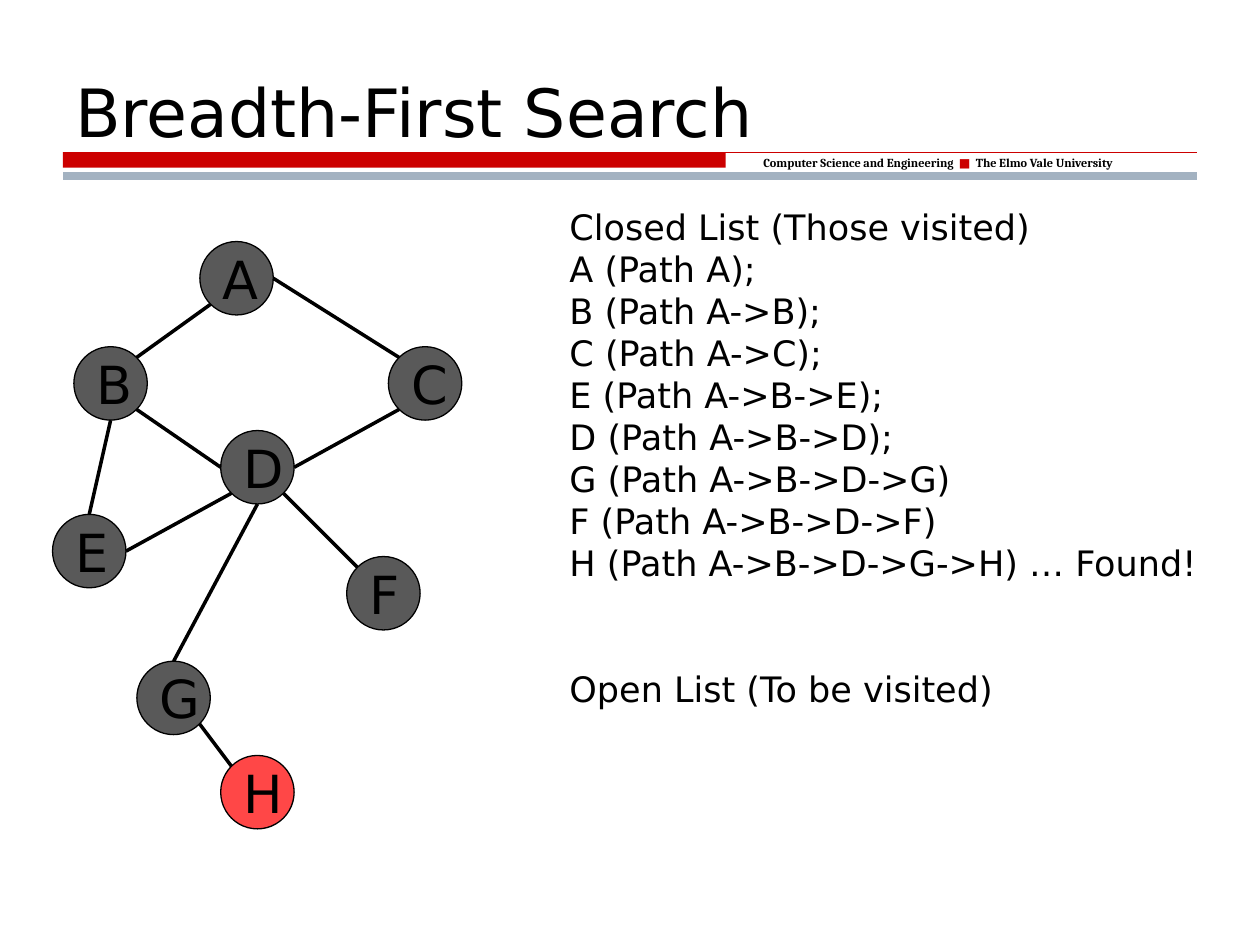
from math import cos, radians, sin

from lxml import etree
from pptx import Presentation
from pptx.dml.color import RGBColor
from pptx.enum import shapes, text
from pptx.oxml.ns import qn
from pptx.util import Cm, Pt

BLACK = RGBColor(0x00, 0x00, 0x00)
RED = RGBColor(0xCC, 0x00, 0x00)
STEEL = RGBColor(0xA3, 0xB2, 0xC1)
VISITED = RGBColor(0x59, 0x59, 0x59)
GOAL = RGBColor(0xFF, 0x47, 0x47)

SANS = "DejaVu Sans"
SERIF = "Cambria"

LEFT, RIGHT = 1.27, 24.13
BAR_TOP, BAR_END = 3.07, 14.63
DIAMETER = 1.48

CENTRES = {
    "A": (4.77, 5.61),
    "B": (2.23, 7.73),
    "C": (8.57, 7.73),
    "D": (5.19, 9.42),
    "E": (1.8, 11.11),
    "F": (7.73, 11.96),
    "G": (3.5, 14.07),
    "H": (5.19, 15.97),
}

ANGLES = {
    "right": 0, "lower right": 45, "bottom": 90, "lower left": 135,
    "left": 180, "upper left": 225, "top": 270, "upper right": 315,
}

EDGES = [
    ("A", "lower left", "B", "upper right"),
    ("A", "right", "C", "upper left"),
    ("D", "left", "B", "lower right"),
    ("D", "right", "C", "lower left"),
    ("D", "lower right", "F", "upper left"),
    ("E", "right", "D", "lower left"),
    ("G", "top", "D", "bottom"),
    ("E", "top", "B", "bottom"),
    ("H", "upper left", "G", "lower right"),
]

CLOSED_LIST = [
    "Closed List (Those visited)",
    "A (Path A);",
    "B (Path A->B);",
    "C (Path A->C);",
    "E (Path A->B->E);",
    "D (Path A->B->D);",
    "G (Path A->B->D->G)",
    "F (Path A->B->D->F)",
    "H (Path A->B->D->G->H) … Found!",
]
OPEN_LIST = "Open List (To be visited)"


def add_span(para, words, size, font=SANS, color=BLACK, bold=False):
    span = para.add_run()
    span.text = words
    span.font.size = Pt(size)
    span.font.name = font
    span.font.color.rgb = color
    span.font.bold = bold


def add_box(page, left, top, width, height, anchor=text.MSO_ANCHOR.TOP):
    box = page.shapes.add_textbox(Cm(left), Cm(top), Cm(width), Cm(height))
    box.text_frame.word_wrap = True
    box.text_frame.vertical_anchor = anchor
    return box.text_frame


def add_line(page, start, end, color, weight):
    line = page.shapes.add_connector(
        shapes.MSO_CONNECTOR.STRAIGHT, *(Cm(value) for value in (*start, *end)))
    line.line.color.rgb = color
    line.line.width = Pt(weight)
    etree.SubElement(line._element.spPr, qn("a:effectLst"))


def add_banner(page):
    bar = page.shapes.add_shape(
        shapes.MSO_SHAPE.RECTANGLE,
        Cm(LEFT), Cm(BAR_TOP), Cm(BAR_END - LEFT), Cm(0.31))
    bar.shadow.inherit = False
    bar.fill.solid()
    bar.fill.fore_color.rgb = RED
    bar.line.fill.background()
    add_line(page, (LEFT, BAR_TOP), (RIGHT, BAR_TOP), RED, 0.75)

    para = add_box(page, 15.14, 3.0, 8.66, 0.56).paragraphs[0]
    add_span(para, "Computer Science and Engineering  ", 7, SERIF, bold=True)
    add_span(para, "■", 7, color=RED)
    add_span(para, "  The Elmo Vale University", 7, SERIF, bold=True)
    add_line(page, (LEFT, 3.55), (RIGHT, 3.55), STEEL, 4.5)


def add_title(page, words):
    frame = add_box(page, LEFT, 0, RIGHT - LEFT, 3.17, text.MSO_ANCHOR.BOTTOM)
    add_span(frame.paragraphs[0], words, 38)


def add_node(page, letter, color):
    x, y = CENTRES[letter]
    node = page.shapes.add_shape(
        shapes.MSO_SHAPE.OVAL, Cm(x - DIAMETER / 2), Cm(y - DIAMETER / 2),
        Cm(DIAMETER), Cm(DIAMETER))
    node.shadow.inherit = False
    node.fill.solid()
    node.fill.fore_color.rgb = color
    node.line.color.rgb = BLACK
    node.line.width = Pt(0.75)
    node.text_frame.vertical_anchor = text.MSO_ANCHOR.MIDDLE
    para = node.text_frame.paragraphs[0]
    para.alignment = text.PP_ALIGN.CENTER
    add_span(para, letter, 30)


def rim_point(letter, side):
    x, y = CENTRES[letter]
    angle = radians(ANGLES[side])
    return x + DIAMETER / 2 * cos(angle), y + DIAMETER / 2 * sin(angle)


def add_graph(page):
    for letter in CENTRES:
        add_node(page, letter, GOAL if letter == "H" else VISITED)
    for first, first_side, second, second_side in EDGES:
        add_line(page, rim_point(first, first_side),
                 rim_point(second, second_side), BLACK, 2)


def add_lists(page):
    frame = add_box(page, 11.23, 4.02, 13.51, 11.38)
    for index, words in enumerate([*CLOSED_LIST, OPEN_LIST]):
        para = frame.add_paragraph() if index else frame.paragraphs[0]
        para.line_spacing = Pt(24)
        if words == OPEN_LIST:
            para.space_before = Pt(48)
        add_span(para, words, 20)


def main():
    deck = Presentation()
    deck.slide_width, deck.slide_height = Cm(25.4), Cm(19.05)
    page = deck.slides.add_slide(deck.slide_layouts[6])
    add_banner(page)
    add_title(page, "Breadth-First Search")
    add_graph(page)
    add_lists(page)
    deck.save("out.pptx")


if __name__ == "__main__":
    main()
